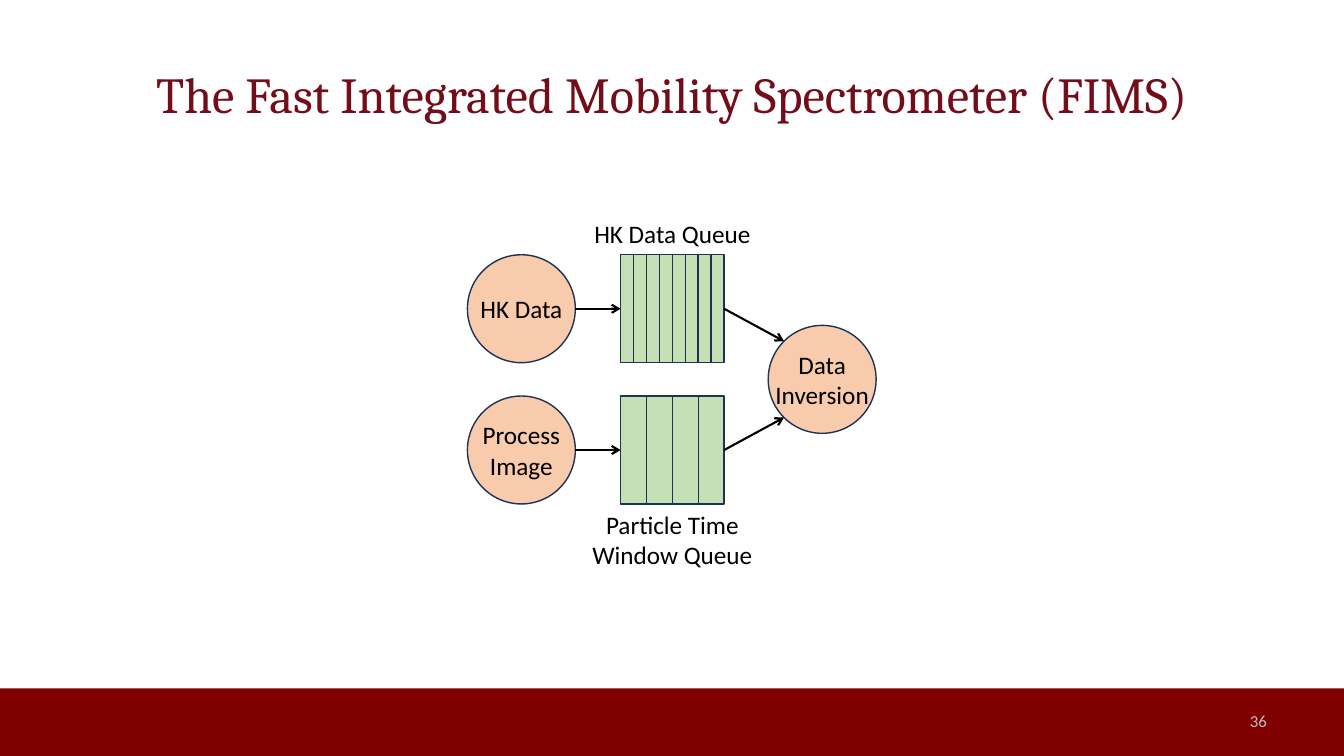
from dataclasses import dataclass
from math import sqrt

from lxml.etree import SubElement
from pptx import Presentation
from pptx.dml.color import RGBColor
from pptx.enum.shapes import MSO_CONNECTOR, MSO_SHAPE
from pptx.enum.text import MSO_ANCHOR, MSO_AUTO_SIZE, PP_ALIGN
from pptx.oxml.ns import qn
from pptx.util import Cm, Pt

TITLE = "The Fast Integrated Mobility Spectrometer (FIMS)"
NUMBER = "36"
# Each row: source label, number of queue cells, top of the row in cm
ROWS = [("HK Data", 8, 6.42), ("Process\nImage", 4, 9.98)]
SINK = "Data\nInversion"
# Each caption: text, top and height in cm
CAPTIONS = [
    ("HK Data Queue", 5.38, 1.03),
    ("Particle Time Window Queue", 12.7, 1.8),
]

WIDTH, HEIGHT = 33.87, 19.05
BAND_TOP = 17.35
SIZE = 2.72  # circle diameter and queue height
SOURCE_X, SINK_X = 11.78, 19.54 - 0.18
QUEUE_X, QUEUE_W = 15.64, 2.61
CAPTION_W = 5.23


@dataclass(frozen=True)
class Theme:
    band: str = "800000"
    title: str = "720D1A"
    number: str = "BFBFBF"
    circle: str = "F8CBAD"
    cell: str = "C5E0B4"
    edge: str = "1E3256"
    ink: str = "000000"
    head: str = "Cambria"
    body: str = "Calibri"
    big: int = 36
    mid: int = 18
    small: int = 12


THEME = Theme()


def write(frame, text, size=THEME.mid, color=THEME.ink, font=THEME.body,
          align=PP_ALIGN.CENTER, anchor=MSO_ANCHOR.MIDDLE, wrap=True, inset=None):
    frame.text = text
    frame.word_wrap = wrap
    frame.auto_size = MSO_AUTO_SIZE.NONE
    frame.vertical_anchor = anchor
    if inset is not None:
        frame.margin_left = frame.margin_right = Cm(inset)
        frame.margin_top = frame.margin_bottom = Cm(inset)
    for para in frame.paragraphs:
        para.alignment = align
        para.font.size = Pt(size)
        para.font.name = font
        para.font.color.rgb = RGBColor.from_string(color)


def draw(shapes, kind, x, y, w, h, fill, edge=None):
    shape = shapes.add_shape(kind, Cm(x), Cm(y), Cm(w), Cm(h))
    shape.shadow.inherit = False
    shape.fill.solid()
    shape.fill.fore_color.rgb = RGBColor.from_string(fill)
    if edge:
        shape.line.color.rgb = RGBColor.from_string(edge)
        shape.line.width = Pt(1)
    else:
        shape.line.fill.background()
    return shape


def circle(shapes, label, x, y):
    shape = draw(shapes, MSO_SHAPE.OVAL, x, y, SIZE, SIZE, THEME.circle, THEME.edge)
    write(shape.text_frame, label, wrap=False, inset=0)


def queue(shapes, count, y):
    """Draw a row of equal cells and return the first and last one."""
    step = QUEUE_W / count
    cells = [
        draw(shapes, MSO_SHAPE.RECTANGLE, QUEUE_X + i * step, y, step, SIZE,
             THEME.cell, THEME.edge)
        for i in range(count)
    ]
    return cells[0], cells[-1]


def arrow(shapes, start, end):
    line = shapes.add_connector(MSO_CONNECTOR.STRAIGHT, *map(Cm, start + end))
    line.line.color.rgb = RGBColor.from_string(THEME.ink)
    line.line.width = Pt(1.5)
    SubElement(line.line._get_or_add_ln(), qn("a:tailEnd"), type="arrow")
    SubElement(line._element.spPr, qn("a:effectLst"))
    return line


def flow(shapes):
    sink_y = sum(top for _, _, top in ROWS) / len(ROWS)
    mid_x, mid_y = SINK_X + SIZE / 2, sink_y + SIZE / 2
    reach = SIZE / 2 / sqrt(2)  # offset of the circle's diagonal points
    circle(shapes, SINK, SINK_X, sink_y)
    for label, count, top in ROWS:
        circle(shapes, label, SOURCE_X, top)
        first, last = queue(shapes, count, top)
        axis = top + SIZE / 2
        side = -1 if axis < mid_y else 1
        enter = arrow(shapes, (SOURCE_X + SIZE, axis), (QUEUE_X, axis))
        enter.end_connect(first, 1)
        leave = arrow(shapes, (QUEUE_X + QUEUE_W, axis),
                      (mid_x - reach, mid_y + side * reach))
        leave.begin_connect(last, 3)
    left = QUEUE_X + (QUEUE_W - CAPTION_W) / 2
    for text, top, height in CAPTIONS:
        box = shapes.add_textbox(Cm(left), Cm(top), Cm(CAPTION_W), Cm(height))
        write(box.text_frame, text, anchor=MSO_ANCHOR.TOP)


def main():
    deck = Presentation()
    deck.slide_width, deck.slide_height = Cm(WIDTH), Cm(HEIGHT)
    slide = deck.slides.add_slide(deck.slide_layouts[5])
    shapes = slide.shapes

    title = shapes.title
    title.left, title.top = Cm(1.69), Cm(0.76)
    title.width, title.height = Cm(30.48), Cm(3.18)
    write(title.text_frame, TITLE, size=THEME.big, color=THEME.title, font=THEME.head)

    draw(shapes, MSO_SHAPE.RECTANGLE, 0, BAND_TOP, WIDTH, HEIGHT - BAND_TOP, THEME.band)
    number = shapes.add_textbox(Cm(24.28), Cm(17.65), Cm(7.9), Cm(1.02))
    write(number.text_frame, NUMBER, size=THEME.small, color=THEME.number,
          align=PP_ALIGN.RIGHT)

    flow(shapes.add_group_shape().shapes)
    deck.save("out.pptx")


if __name__ == "__main__":
    main()
